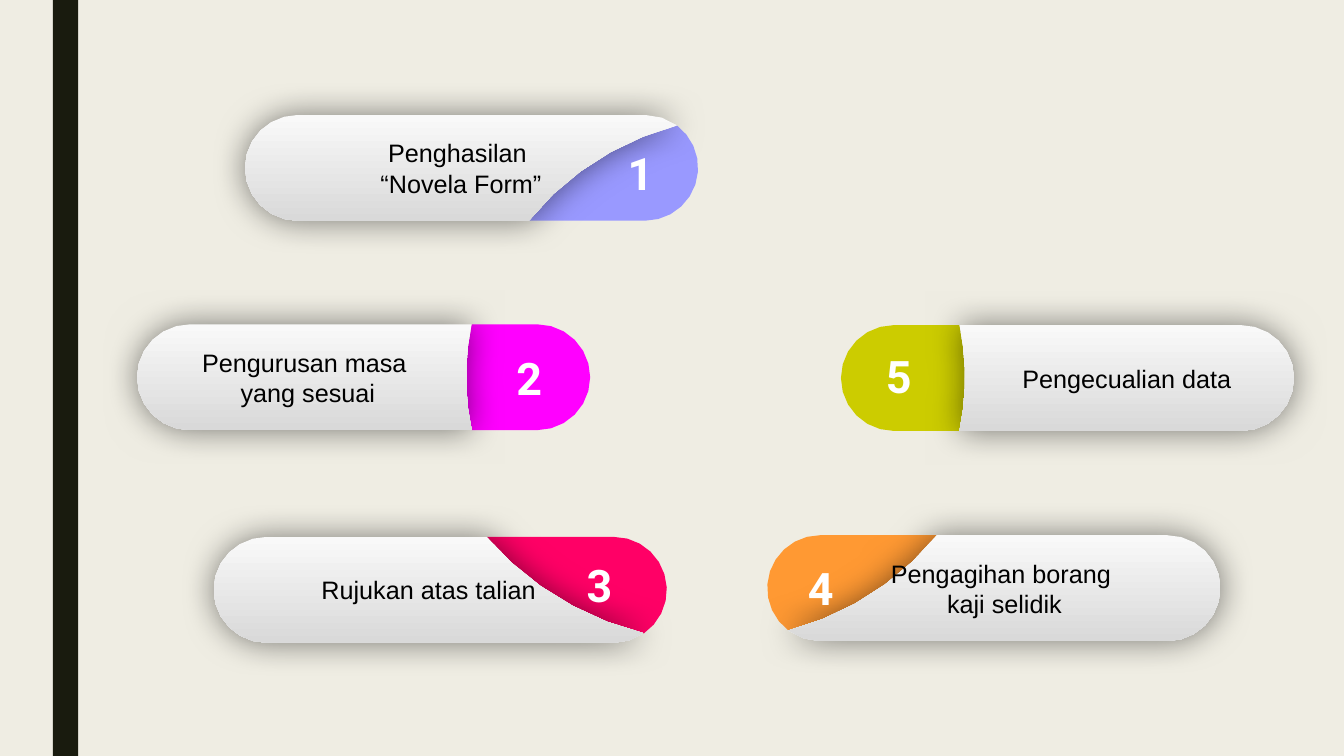
import math

import lxml.etree
import pptx
import pptx.dml.color
import pptx.enum.shapes
import pptx.enum.text
import pptx.oxml.ns
import pptx.util

COLORS = {
    "background": "EFEDE3", "bar": "191B0E", "text": "000000", "number": "FFFFFF",
    "body_top": "F9F9F9", "body_bottom": "D9D9D9", "shadow": "000000",
    "lilac": "9999FF", "magenta": "FF00FF", "crimson": "FF0066",
    "orange": "FF9933", "olive": "CCCC00",
}
WIDTH = pptx.util.Inches(13.33)
HEIGHT = pptx.util.Inches(7.5)
COLUMN = WIDTH / 100
ROW = HEIGHT / 100

# Pill geometry is measured in pill heights.
PILL_HEIGHT = 14 * ROW
PILL_LENGTH = 4.28
RADIUS = 0.5
CAP_X = PILL_LENGTH - RADIUS
NUMBER_SIZE = (0.47, 0.61)
ARC_STEP = 15
SEAM_STEPS = 5

# Bezier control points of the seam between body and tab, from top to bottom.
SEAMS = {
    "rising": [(4.08, 0.1), (3.54, 0.24), (3.03, 0.56), (2.68, 1)],
    "upright": [(3.16, 0), (3.09, 0.33), (3.09, 0.67), (3.16, 1)],
    "falling": [(2.58, 0), (2.94, 0.43), (3.48, 0.77), (4.06, 0.91)],
}

# Column, row, seam, turned by half a circle, tab colour, number, its offset, lines
PILLS = [
    (18.23, 15.2, "rising", False, "lilac", "1", (3.52, 0.24),
     ["Penghasilan ", "“Novela Form”"]),
    (10.2, 42.9, "upright", False, "magenta", "2", (3.49, 0.2),
     ["Pengurusan masa", " yang sesuai"]),
    (15.9, 71.02, "falling", False, "crimson", "3", (3.43, 0.15),
     ["Rujukan atas talian"]),
    (57.09, 70.8, "rising", True, "orange", "4", (0.29, 0.19),
     ["Pengagihan borang ", "kaji selidik"]),
    (62.57, 43, "upright", True, "olive", "5", (0.33, 0.18),
     ["Pengecualian data"]),
]


def rgb(name):
    return pptx.dml.color.RGBColor.from_string(COLORS[name])


def write_text(text_frame, lines, font, size, color, bold=False, align=None, wrap=True):
    text_frame.word_wrap = wrap
    for index, line in enumerate(lines):
        paragraph = text_frame.paragraphs[0] if index == 0 else text_frame.add_paragraph()
        paragraph.alignment = align
        run = paragraph.add_run()
        run.text = line
        run.font.name = font
        run.font.size = pptx.util.Pt(size)
        run.font.bold = bold
        run.font.color.rgb = rgb(color)


def arc(center_x, start, end):
    steps = max(1, round((end - start) / ARC_STEP))
    angles = [math.radians(start + (end - start) * i / steps) for i in range(steps + 1)]
    return [(center_x + RADIUS * math.cos(a), RADIUS + RADIUS * math.sin(a))
            for a in angles]


def bezier(controls):
    points = []
    for i in range(SEAM_STEPS + 1):
        t = i / SEAM_STEPS
        weights = [math.comb(3, k) * (1 - t) ** (3 - k) * t ** k for k in range(4)]
        points.append(tuple(sum(w * c[axis] for w, c in zip(weights, controls))
                            for axis in (0, 1)))
    return points


def cap_angle(point, flat_angle):
    """Angle of a seam end on the round cap, or flat_angle if it is on the straight edge."""
    x, y = point
    if x <= CAP_X:
        return flat_angle
    return math.degrees(math.atan2(y - RADIUS, x - CAP_X))


def pill_outlines(seam_name):
    seam = bezier(SEAMS[seam_name])
    start, end = cap_angle(seam[0], -90), cap_angle(seam[-1], 90)
    tab = seam[::-1] + arc(CAP_X, start, end)
    body = arc(RADIUS, 90, 270)
    if start > -90:
        body += arc(CAP_X, -90, start)[:-1]
    body += seam
    if end < 90:
        body += arc(CAP_X, end, 90)[1:]
    return tab, body


def add_outline(shapes, points, left, top, turned):
    if turned:
        points = [(PILL_LENGTH - x, 1 - y) for x, y in points]
    places = [(round(left + x * PILL_HEIGHT), round(top + y * PILL_HEIGHT))
              for x, y in points]
    builder = shapes.build_freeform(*places[0])
    builder.add_line_segments(places[1:], close=True)
    shape = builder.convert_to_shape()
    shape.shadow.inherit = False
    shape.line.fill.background()
    return shape


def add_soft_shadow(shape):
    tag = pptx.oxml.ns.qn
    effects = shape.element.spPr.find(tag("a:effectLst"))
    shadow = lxml.etree.SubElement(effects, tag("a:outerShdw"),
                                   blurRad=str(pptx.util.Pt(24)), dist="0", dir="0",
                                   algn="ctr", rotWithShape="0")
    color = lxml.etree.SubElement(shadow, tag("a:srgbClr"), val=COLORS["shadow"])
    lxml.etree.SubElement(color, tag("a:alpha"), val="50000")


def fill_body(shape):
    shape.fill.gradient()
    shape.fill.gradient_angle = 270
    for stop, name in zip(shape.fill.gradient_stops, ("body_top", "body_bottom")):
        stop.color.rgb = rgb(name)


def add_pill(slide, left, top, seam_name, turned, color, number, offset, lines):
    shapes = slide.shapes.add_group_shape().shapes
    tab_points, body_points = pill_outlines(seam_name)

    tab = add_outline(shapes, tab_points, left, top, turned)
    tab.fill.solid()
    tab.fill.fore_color.rgb = rgb(color)

    body = add_outline(shapes, body_points, left, top, turned)
    fill_body(body)
    add_soft_shadow(body)
    body.text_frame.vertical_anchor = pptx.enum.text.MSO_ANCHOR.MIDDLE
    write_text(body.text_frame, lines, "Arial", 18, "text",
               align=pptx.enum.text.PP_ALIGN.CENTER)

    box = shapes.add_textbox(round(left + offset[0] * PILL_HEIGHT),
                             round(top + offset[1] * PILL_HEIGHT),
                             *(round(side * PILL_HEIGHT) for side in NUMBER_SIZE))
    write_text(box.text_frame, [number], "Roboto", 32, "number", bold=True, wrap=False)
    box.text_frame.auto_size = pptx.enum.text.MSO_AUTO_SIZE.SHAPE_TO_FIT_TEXT


def add_backdrop(slide):
    slide.background.fill.solid()
    slide.background.fill.fore_color.rgb = rgb("background")
    bar = slide.shapes.add_shape(pptx.enum.shapes.MSO_SHAPE.RECTANGLE,
                                 round(3.93 * COLUMN), 0, round(1.88 * COLUMN), HEIGHT)
    bar.shadow.inherit = False
    bar.fill.solid()
    bar.fill.fore_color.rgb = rgb("bar")
    bar.line.fill.background()


def main():
    presentation = pptx.Presentation()
    presentation.slide_width = WIDTH
    presentation.slide_height = HEIGHT
    slide = presentation.slides.add_slide(presentation.slide_layouts[6])
    add_backdrop(slide)
    for column, row, *details in PILLS:
        add_pill(slide, column * COLUMN, row * ROW, *details)
    presentation.save("out.pptx")


if __name__ == "__main__":
    main()
